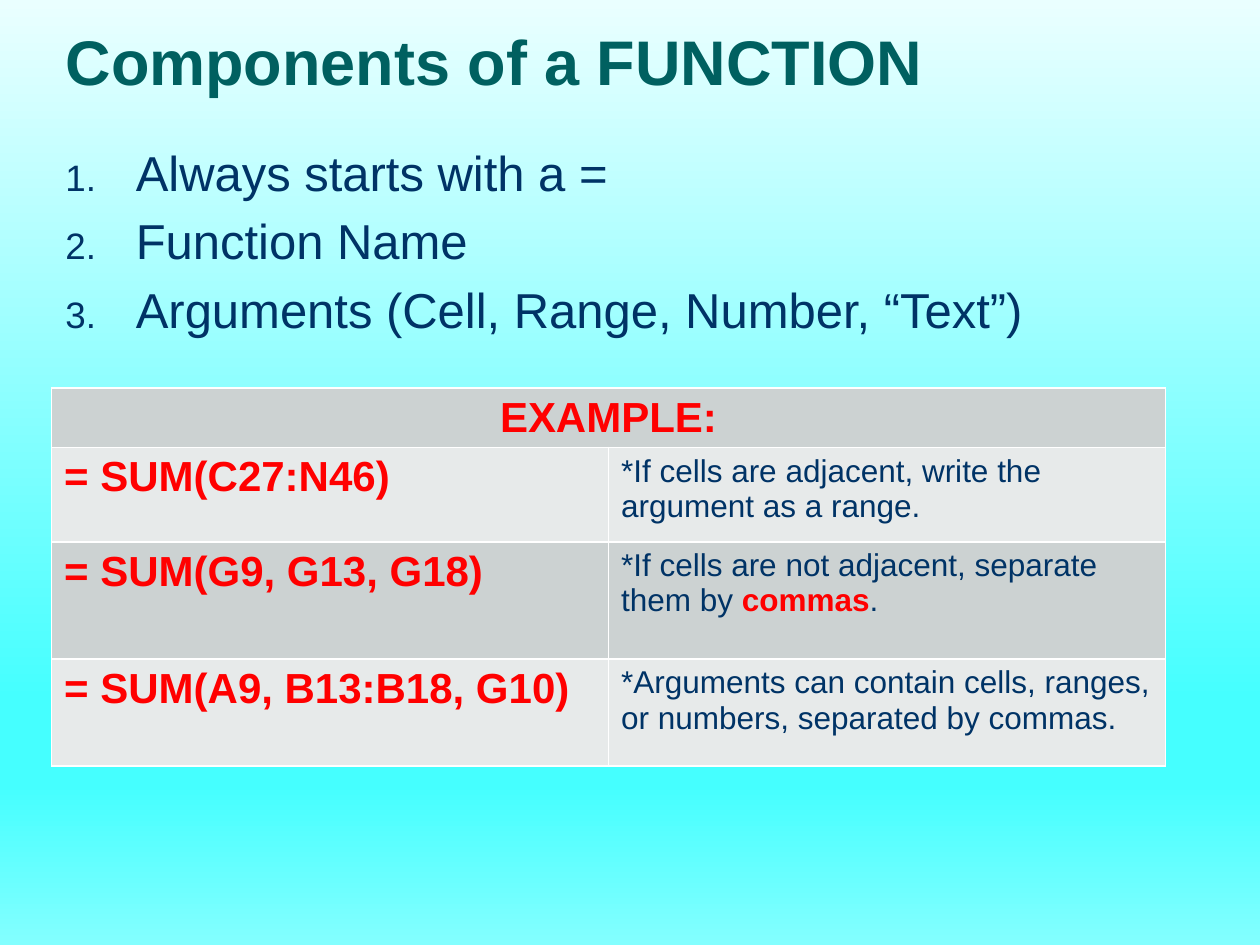
"""Build a slide that explains the components of a spreadsheet function."""
from lxml import etree
from pptx import Presentation
from pptx.dml.color import RGBColor as Rgb
from pptx.enum.text import MSO_ANCHOR as Anchor, PP_ALIGN as Align
from pptx.oxml import parse_xml
from pptx.oxml.ns import nsdecls, qn
from pptx.util import Inches, Pt

COLORS = {
    "title": "006060", "navy": "003366", "red": "FF0000", "white": "FFFFFF",
    "dark_row": "CCD2D2", "light_row": "E7EAEA",
}
BACKGROUND = [(0, "EAFFFF"), (74, "45FFFF"), (83, "45FFFF"), (100, "83FFFF")]
COMPONENTS = [
    "Always starts with a =",
    "Function Name",
    "Arguments (Cell, Range, Number, “Text”)",
]
EXAMPLES = [
    ("= SUM(C27:N46)",
     [("*If cells are adjacent, write the argument as a range.", False)]),
    ("= SUM(G9, G13, G18)",
     [("*If cells are not adjacent, separate them by ", False),
      ("commas", True), (".", False)]),
    ("= SUM(A9, B13:B18, G10)",
     [("*Arguments can contain cells, ranges, or numbers, separated by commas.", False)]),
]
ROW_HEIGHTS = [0.47, 0.75, 0.93, 0.85]
COLUMN_WIDTH = 4.42


class SlideBuilder:
    def __init__(self, slide, font="Arial"):
        self.slide = slide
        self.font = font

    def add_span(self, para, text, size, color, bold=False):
        span = para.add_run()
        span.text = text
        span.font.name = self.font
        span.font.size = Pt(size)
        span.font.bold = bold
        span.font.color.rgb = Rgb.from_string(COLORS[color])

    def background(self, stops):
        fill = self.slide.background.fill
        fill.gradient()
        fill.gradient_angle = 270
        stop_list = next(self.slide.element.iter(qn("a:gsLst")))
        for old_stop in list(stop_list):
            stop_list.remove(old_stop)
        for position, color in stops:
            stop = etree.SubElement(stop_list, qn("a:gs"), pos=str(position * 1000))
            etree.SubElement(stop, qn("a:srgbClr"), val=color)

    def title(self, text, left, top, width, height):
        box = self.slide.shapes.title
        box.left, box.top = Inches(left), Inches(top)
        box.width, box.height = Inches(width), Inches(height)
        box._element.spPr.append(parse_xml(
            f'<a:prstGeom {nsdecls("a")} prst="roundRect"><a:avLst>'
            '<a:gd name="adj" fmla="val 21700"/></a:avLst></a:prstGeom>'))
        frame = box.text_frame
        frame.vertical_anchor = Anchor.BOTTOM
        frame.margin_left = frame.margin_right = Inches(0.1)
        frame.margin_top = frame.margin_bottom = Inches(0.04)
        para = frame.paragraphs[0]
        para.alignment = Align.LEFT
        para.line_spacing = 0.9
        self.add_span(para, text, 36, "title", True)

    def numbered_list(self, items, left, top, width, height):
        box = self.slide.shapes.add_textbox(
            Inches(left), Inches(top), Inches(width), Inches(height))
        frame = box.text_frame
        frame.word_wrap = True
        for index, item in enumerate(items):
            para = frame.add_paragraph() if index else frame.paragraphs[0]
            properties = para._p.get_or_add_pPr()
            properties.set("marL", str(Inches(0.56)))
            properties.set("indent", str(-Inches(0.56)))
            color = etree.SubElement(properties, qn("a:buClr"))
            etree.SubElement(color, qn("a:srgbClr"), val=COLORS["navy"])
            etree.SubElement(properties, qn("a:buSzPct"), val="75000")
            etree.SubElement(properties, qn("a:buFont"), typeface=self.font)
            etree.SubElement(properties, qn("a:buAutoNum"), type="arabicPeriod")
            para.space_before = Pt(5.6 if index else 0)
            self.add_span(para, item, 28, "navy")

    def style_cell(self, cell, fill):
        properties = cell._tc.get_or_add_tcPr()
        for side in ("lnL", "lnR", "lnT", "lnB"):
            properties.append(parse_xml(
                f'<a:{side} {nsdecls("a")} w="{Pt(1)}"><a:solidFill>'
                f'<a:srgbClr val="{COLORS["white"]}"/></a:solidFill></a:{side}>'))
        cell.fill.solid()
        cell.fill.fore_color.rgb = Rgb.from_string(COLORS[fill])

    def example_table(self, heading, examples, left, top):
        table = self.slide.shapes.add_table(
            len(ROW_HEIGHTS), 2, Inches(left), Inches(top),
            Inches(2 * COLUMN_WIDTH), Inches(sum(ROW_HEIGHTS))).table
        for column in table.columns:
            column.width = Inches(COLUMN_WIDTH)
        for index, (row, height) in enumerate(zip(table.rows, ROW_HEIGHTS)):
            row.height = Inches(height)
            for cell in row.cells:
                self.style_cell(cell, "light_row" if index % 2 else "dark_row")

        header = table.cell(0, 0)
        header.merge(table.cell(0, 1))
        header.margin_bottom = Inches(0.02)
        para = header.text_frame.paragraphs[0]
        para.alignment = Align.CENTER
        self.add_span(para, heading, 24, "red", True)

        for index, (formula, note) in enumerate(examples, start=1):
            formula_para, note_para = (
                table.cell(index, column).text_frame.paragraphs[0] for column in (0, 1))
            self.add_span(formula_para, formula, 24, "red", True)
            for text, strong in note:
                self.add_span(note_para, text, 18, "red" if strong else "navy", strong)


def main():
    deck = Presentation()
    deck.slide_width, deck.slide_height = Inches(10), Inches(7.5)
    page = SlideBuilder(deck.slides.add_slide(deck.slide_layouts[5]))
    page.background(BACKGROUND)
    page.title("Components of a FUNCTION", 0.42, 0.08, 8.67, 0.75)
    page.numbered_list(COMPONENTS, 0.42, 1.08, 8.41, 4.5)
    page.example_table("EXAMPLE:", EXAMPLES, 0.41, 3.08)
    deck.save("out.pptx")


if __name__ == "__main__":
    main()
